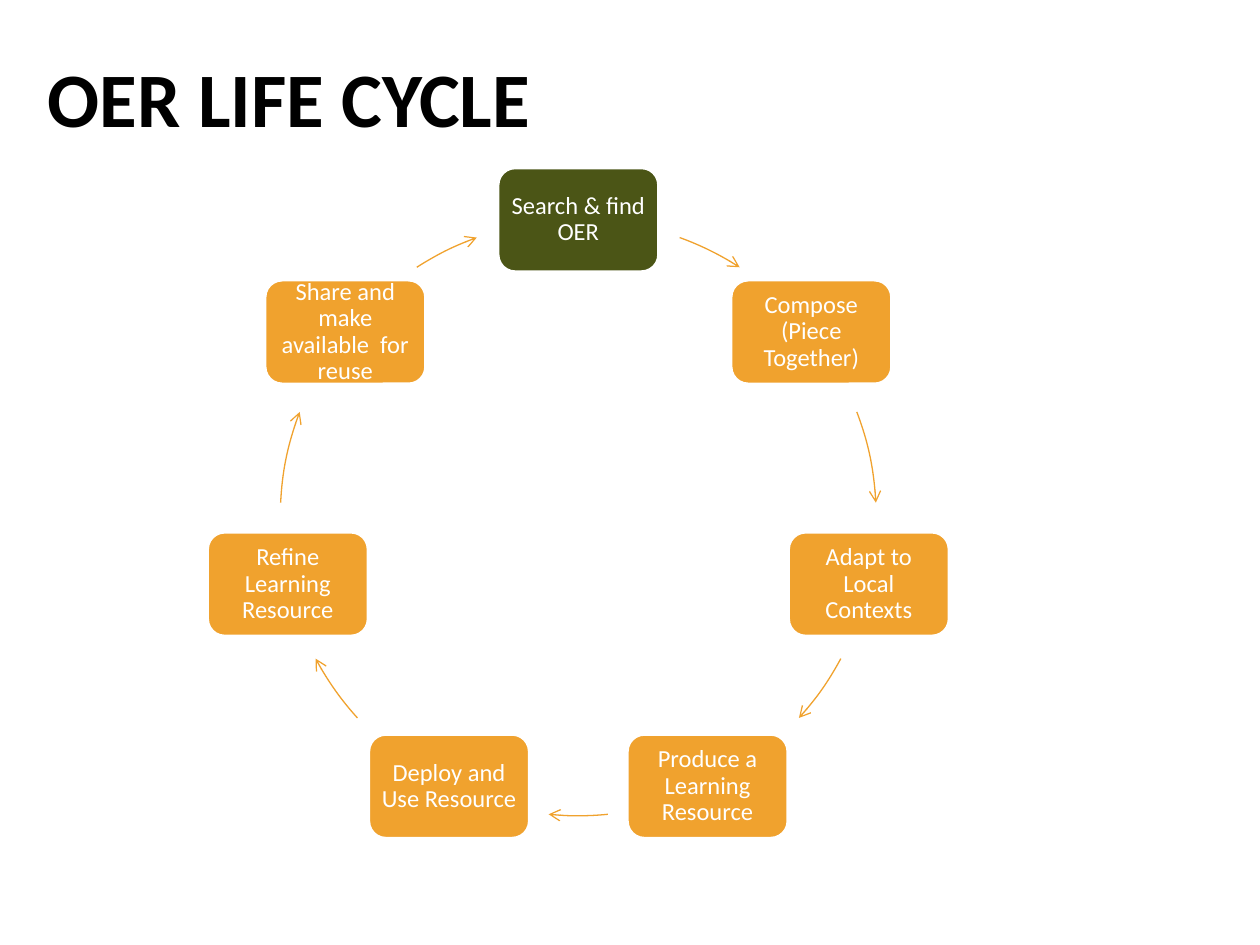
from math import cos, radians, sin

from lxml.etree import SubElement
from pptx import Presentation
from pptx.dml.color import RGBColor
from pptx.enum.shapes import MSO_SHAPE as Shape
from pptx.enum.text import MSO_ANCHOR as Anchor, PP_ALIGN as Align
from pptx.oxml.ns import qn
from pptx.util import Inches, Pt


def color(target, value):
    if hasattr(target, "solid"):
        target.solid()
        target = target.fore_color
    target.rgb = RGBColor.from_string(value)


def write(shape, text, size, ink, bold=False, align=Align.LEFT, spacing=1.0, inset=0.1):
    frame = shape.text_frame
    frame.word_wrap = True
    frame.vertical_anchor = Anchor.MIDDLE
    frame.margin_left = frame.margin_right = Inches(inset)
    frame.margin_top = frame.margin_bottom = Inches(min(inset, 0.06))
    para = frame.paragraphs[0]
    para.alignment = align
    para.line_spacing = spacing
    span = para.add_run()
    span.text = text
    span.font.name = "Calibri"
    span.font.size = Pt(size)
    span.font.bold = bold
    color(span.font.color, ink)


deck = Presentation()
deck.slide_width, deck.slide_height = Inches(10), Inches(7.5)
page = deck.slides.add_slide(deck.slide_layouts[5])

title = page.shapes.title
title.left, title.top = Inches(0.28), Inches(0.14)
title.width, title.height = Inches(9), Inches(1.25)
write(title, "OER LIFE CYCLE", 44, "000000", bold=True)

GREEN, ORANGE, WHITE = "4B5516", "F0A22E", "FFFFFF"
center_x, center_y, radius = 4.59, 4.11, 2.365
box_width, box_height = 1.28, 0.83
stages = [
    "Search & find OER",
    "Compose (Piece Together)",
    "Adapt to Local Contexts",
    "Produce a Learning Resource",
    "Deploy and Use Resource",
    "Refine Learning Resource",
    "Share and make available  for reuse",
]
right_arcs = [(19.9, 32.8), (69.2, 87.1), (118.2, 132.2)]
left_arcs = [(360 - end, 360 - start) for start, end in reversed(right_arcs)]
arcs = right_arcs + [(174.3, 185.7)] + left_arcs

for index, (stage, arc_angles) in enumerate(zip(stages, arcs)):
    angle = radians(360 * index / len(stages))
    box = page.shapes.add_shape(
        Shape.ROUNDED_RECTANGLE,
        Inches(center_x + radius * sin(angle) - box_width / 2),
        Inches(center_y - radius * cos(angle) - box_height / 2),
        Inches(box_width), Inches(box_height))
    box.shadow.inherit = False
    color(box.fill, GREEN if index == 0 else ORANGE)
    color(box.line.fill, WHITE)
    box.line.width = Pt(2)
    write(box, stage, 14, WHITE, align=Align.CENTER, spacing=0.9, inset=0.06)

    arrow = page.shapes.add_shape(
        Shape.ARC, Inches(center_x - radius), Inches(center_y - radius),
        Inches(2 * radius), Inches(2 * radius))
    arrow.shadow.inherit = False
    for slot, degrees in enumerate(arc_angles):
        arrow.adjustments[slot] = (degrees - 90) % 360 * 0.6
    arrow.fill.background()
    color(arrow.line.fill, ORANGE)
    arrow.line.width = Pt(0.75)
    SubElement(arrow.line._get_or_add_ln(), qn("a:tailEnd"), type="arrow")

deck.save("out.pptx")
